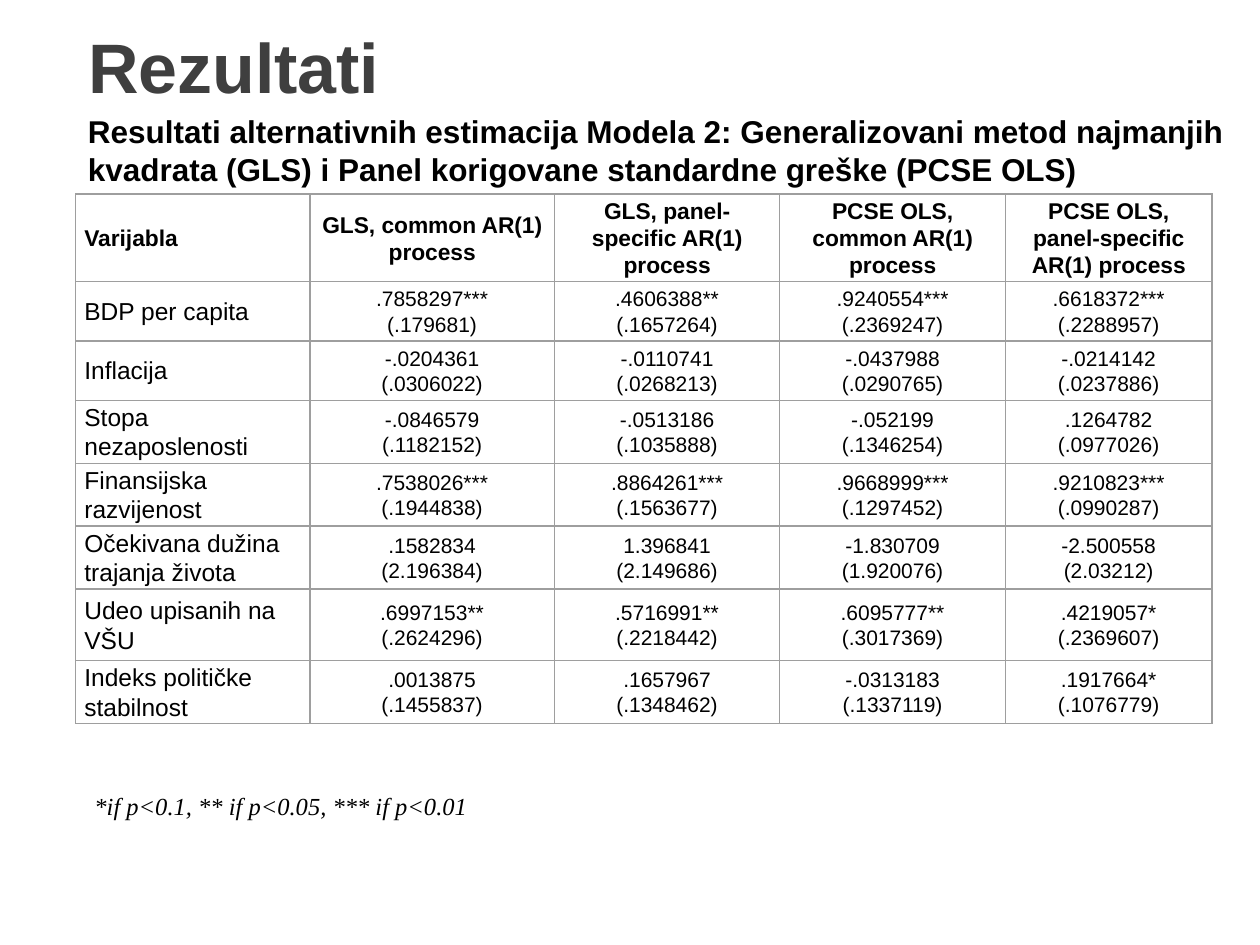
from lxml.etree import SubElement
from pptx import Presentation
from pptx.dml.color import RGBColor
from pptx.enum.text import MSO_ANCHOR, PP_ALIGN
from pptx.oxml.ns import qn
from pptx.util import Inches, Pt

BLACK = RGBColor(0, 0, 0)
WHITE = RGBColor(255, 255, 255)
TITLE_GREY = RGBColor(0x3F, 0x3F, 0x3F)
BORDER = RGBColor(0x9E, 0x9E, 0x9E)

TITLE = "Rezultati"
SUBTITLE = ("Resultati alternativnih estimacija Modela 2: Generalizovani metod najmanjih "
            "kvadrata (GLS) i Panel korigovane standardne greške (PCSE OLS)")
FOOTNOTE = "*if p<0.1, ** if p<0.05, *** if p<0.01"

HEADER = ["Varijabla", "GLS, common AR(1) process", "GLS, panel-specific AR(1) process",
          "PCSE OLS, common AR(1) process", "PCSE OLS, panel-specific AR(1) process"]
# Variable, then a coefficient and its standard error for each model
RESULTS = [
    ["BDP per capita", (".7858297***", "(.179681)"), (".4606388**", "(.1657264)"),
     (".9240554***", "(.2369247)"), (".6618372***", "(.2288957)")],
    ["Inflacija", ("-.0204361", "(.0306022)"), ("-.0110741", "(.0268213)"),
     ("-.0437988", "(.0290765)"), ("-.0214142", "(.0237886)")],
    ["Stopa nezaposlenosti", ("-.0846579", "(.1182152)"), ("-.0513186", "(.1035888)"),
     ("-.052199", "(.1346254)"), (".1264782", "(.0977026)")],
    ["Finansijska razvijenost", (".7538026***", "(.1944838)"), (".8864261***", "(.1563677)"),
     (".9668999***", "(.1297452)"), (".9210823***", "(.0990287)")],
    ["Očekivana dužina trajanja života", (".1582834", "(2.196384)"), ("1.396841", "(2.149686)"),
     ("-1.830709", "(1.920076)"), ("-2.500558", "(2.03212)")],
    ["Udeo upisanih na VŠU", (".6997153**", "(.2624296)"), (".5716991**", "(.2218442)"),
     (".6095777**", "(.3017369)"), (".4219057*", "(.2369607)")],
    ["Indeks političke stabilnost", (".0013875", "(.1455837)"), (".1657967", "(.1348462)"),
     ("-.0313183", "(.1337119)"), (".1917664*", "(.1076779)")],
]
COL_WIDTHS = [1.86, 1.94, 1.79, 1.79, 1.64]
ROW_HEIGHTS = [0.5] + [0.47] * 5 + [0.57, 0.47]
LEFT = 0.6


def set_font(font, color=BLACK, **values):
    for name, value in values.items():
        setattr(font, name, value)
    font.color.rgb = color


def add_text(slide, box, text, wrap=True, inset=0.1, **font):
    tf = slide.shapes.add_textbox(*map(Inches, box)).text_frame
    tf.word_wrap = wrap
    tf.margin_left = Inches(inset)
    r = tf.paragraphs[0].add_run()
    r.text = text
    set_font(r.font, **font)


def add_borders(cell):
    tc_pr = cell._tc.get_or_add_tcPr()
    for side in ("lnL", "lnR", "lnT", "lnB"):
        ln = SubElement(tc_pr, qn(f"a:{side}"), w=str(Pt(0.75)))
        SubElement(SubElement(ln, qn("a:solidFill")), qn("a:srgbClr"), val=str(BORDER))


def fill_cell(cell, lines, size, bold, align):
    add_borders(cell)
    cell.fill.solid()
    cell.fill.fore_color.rgb = WHITE
    cell.vertical_anchor = MSO_ANCHOR.MIDDLE
    cell.margin_left = cell.margin_right = Inches(0.07)
    cell.margin_top = cell.margin_bottom = 0
    tf = cell.text_frame
    for i, line in enumerate(lines):
        p = tf.add_paragraph() if i else tf.paragraphs[0]
        p.alignment = align
        p.line_spacing = 1.07
        r = p.add_run()
        r.text = line
        set_font(r.font, name="Arial", size=Pt(size), bold=bold)


def add_results_table(slide):
    rows = [HEADER] + RESULTS
    frame = slide.shapes.add_table(
        len(rows), len(HEADER), Inches(LEFT), Inches(1.54),
        Inches(sum(COL_WIDTHS)), Inches(sum(ROW_HEIGHTS)))
    table = frame.table
    for column, width in zip(table.columns, COL_WIDTHS):
        column.width = Inches(width)
    for row, height in zip(table.rows, ROW_HEIGHTS):
        row.height = Inches(height)
    for i, values in enumerate(rows):
        for j, value in enumerate(values):
            lines = [value] if isinstance(value, str) else value
            size = 13 if i == 0 else 14 if j == 0 else 12
            align = PP_ALIGN.CENTER if j else PP_ALIGN.LEFT
            fill_cell(table.cell(i, j), lines, size, i == 0, align)


def main():
    prs = Presentation()
    prs.slide_width, prs.slide_height = Inches(10), Inches(7.5)
    slide = prs.slides.add_slide(prs.slide_layouts[6])
    add_text(slide, (LEFT, 0.14, 8.48, 1.15), TITLE,
             name="Arial", size=Pt(40), bold=True, color=TITLE_GREY)
    add_text(slide, (LEFT, 0.84, 9.33, 0.71), SUBTITLE, name="Arial", size=Pt(18), bold=True)
    add_results_table(slide)
    add_text(slide, (LEFT, 6.23, 3.23, 0.34), FOOTNOTE, wrap=False, inset=0.15,
             name="Times New Roman", size=Pt(14), italic=True)
    prs.save("out.pptx")


if __name__ == "__main__":
    main()
